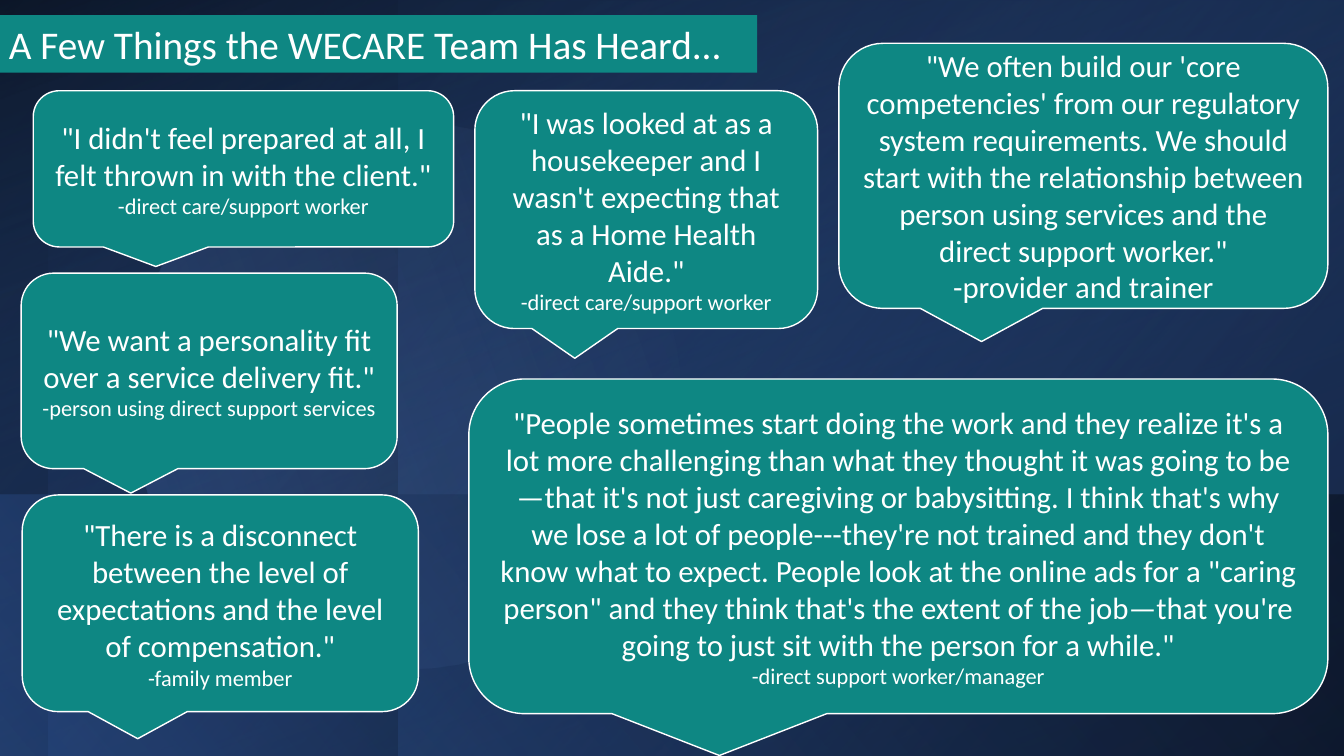
from lxml import etree
from pptx import Presentation
from pptx.dml.color import RGBColor
from pptx.enum.shapes import MSO_SHAPE
from pptx.enum.text import MSO_ANCHOR, PP_ALIGN
from pptx.oxml.ns import qn
from pptx.util import Inches, Pt

RECT, OVAL = MSO_SHAPE.RECTANGLE, MSO_SHAPE.OVAL
CALLOUT = MSO_SHAPE.ROUNDED_RECTANGULAR_CALLOUT
MIDDLE, TOP = MSO_ANCHOR.MIDDLE, MSO_ANCHOR.TOP
CENTER, LEFT = PP_ALIGN.CENTER, PP_ALIGN.LEFT
TEAL, WHITE, BLACK = "0E8783", "FFFFFF", "000000"
NAVY, BLUE, BRIGHT, PALE = "203864", "2F5597", "4472C4", "8FAADC"

prs = Presentation()
prs.slide_width, prs.slide_height = Inches(13.33), Inches(7.5)
s = prs.slides.add_slide(prs.slide_layouts[6])


def add_panel(kind, box, paragraphs=(), align=CENTER, anchor=MIDDLE):
    """Add a teal shape without outline, with (text, size) paragraphs."""
    sp = s.shapes.add_shape(kind, *[Inches(v) for v in box])
    sp.shadow.inherit = False
    sp.fill.solid()
    sp.fill.fore_color.rgb = RGBColor.from_string(TEAL)
    sp.line.fill.background()
    tf = sp.text_frame
    tf.word_wrap = True
    tf.vertical_anchor = anchor
    for i, (text, size) in enumerate(paragraphs):
        p = tf.add_paragraph() if i else tf.paragraphs[0]
        p.text = text
        p.alignment = align
        p.font.name = "Calibri"
        p.font.size = Pt(size)
        p.font.color.rgb = RGBColor.from_string(WHITE)
    return sp


def set_gradient(sp, stops, angle):
    """Replace the solid fill by a gradient of (position, colour, opacity) stops."""
    grad = etree.Element(qn("a:gradFill"), rotWithShape="1")
    stop_list = etree.SubElement(grad, qn("a:gsLst"))
    for position, color, opacity in stops:
        gs = etree.SubElement(stop_list, qn("a:gs"), pos=str(position * 1000))
        clr = etree.SubElement(gs, qn("a:srgbClr"), val=color)
        if opacity < 100:
            etree.SubElement(clr, qn("a:alpha"), val=str(opacity * 1000))
    etree.SubElement(grad, qn("a:lin"), ang=str(angle * 60000), scaled="0")
    solid = sp.element.spPr.find(qn("a:solidFill"))
    sp.element.spPr.replace(solid, grad)


# Layered background: kind, box, rotation, mirrored, stops, gradient angle
layers = [
    (RECT, (-0.01, 0, 13.37, 7.51), 180, False, [(0, BLACK, 100), (100, BLUE, 100)], 70),
    (RECT, (0.48, 0, 12.87, 7.51), 180, True, [(21, NAVY, 83), (100, BRIGHT, 0)], 140),
    (RECT, (-0.02, 0, 3.96, 7.51), 180, False, [(0, BLUE, 0), (99, BLACK, 41)], 220),
    (RECT, (-0.02, 0, 13.38, 7.51), 0, True, [(3, BLUE, 0), (100, BLACK, 73)], 290),
    (RECT, (4.9, -0.94, 7.5, 9.4), 90, True, [(3, BLUE, 0), (100, BLACK, 27)], 230),
    (OVAL, (1.3, 1.19, 5.43, 5.46), 99.9, False, [(0, BRIGHT, 26), (85, PALE, 0)], 240),
    (RECT, (0, 4.91, 13.36, 2.6), 0, True, [(0, BLUE, 50), (99, BLACK, 34)], 220),
]
for kind, box, rotation, mirrored, stops, angle in layers:
    sp = add_panel(kind, box)
    sp.rotation = rotation
    if mirrored:
        sp.element.spPr.find(qn("a:xfrm")).set("flipH", "1")
    set_gradient(sp, stops, angle)

# Title band
add_panel(RECT, (-0.01, 0.15, 7.52, 0.57),
          [("A Few Things the WECARE Team Has Heard...", 28)], LEFT, TOP)

# Quote callouts: box, quote, speaker, speaker size
quotes = [
    ((0.33, 0.9, 4.17, 1.55),
     "\"I didn't feel prepared at all, I felt thrown in with the client.\"",
     "-direct care/support worker", 16),
    ((4.71, 0.9, 3.4, 2.36),
     "\"I was looked at as a housekeeper and I wasn't expecting that as a "
     "Home Health Aide.\"",
     "-direct care/support worker", 16),
    ((8.32, 0.43, 4.85, 2.63),
     "\"We often build our 'core competencies' from our regulatory system "
     "requirements. We should start with the relationship between person using "
     "services and the direct support worker.\"",
     "-provider and trainer", 22),
    ((0.21, 2.71, 3.73, 1.94),
     "\"We want a personality fit over a service delivery fit.\" ",
     "-person using direct support services", 16),
    ((0.22, 4.91, 3.93, 2.15),
     "\"There is a disconnect between the level of expectations and the "
     "level of compensation.\"",
     "-family member", 16),
    ((4.65, 3.76, 8.52, 3.32),
     "\"People sometimes start doing the work and they realize it's a lot more "
     "challenging than what they thought it was going to be—that it's not just "
     "caregiving or babysitting. I think that's why we lose a lot of "
     "people---they're not trained and they don't know what to expect. People "
     "look at the online ads for a \"caring person\" and they think that's the "
     "extent of the job—that you're going to just sit with the person for a while.\"",
     "-direct support worker/manager", 16),
]
for box, quote, speaker, size in quotes:
    sp = add_panel(CALLOUT, box, [(quote, 22), (speaker, size)])
    sp.line.color.rgb = RGBColor.from_string(WHITE)
    sp.line.width = Pt(1)

prs.save("out.pptx")
